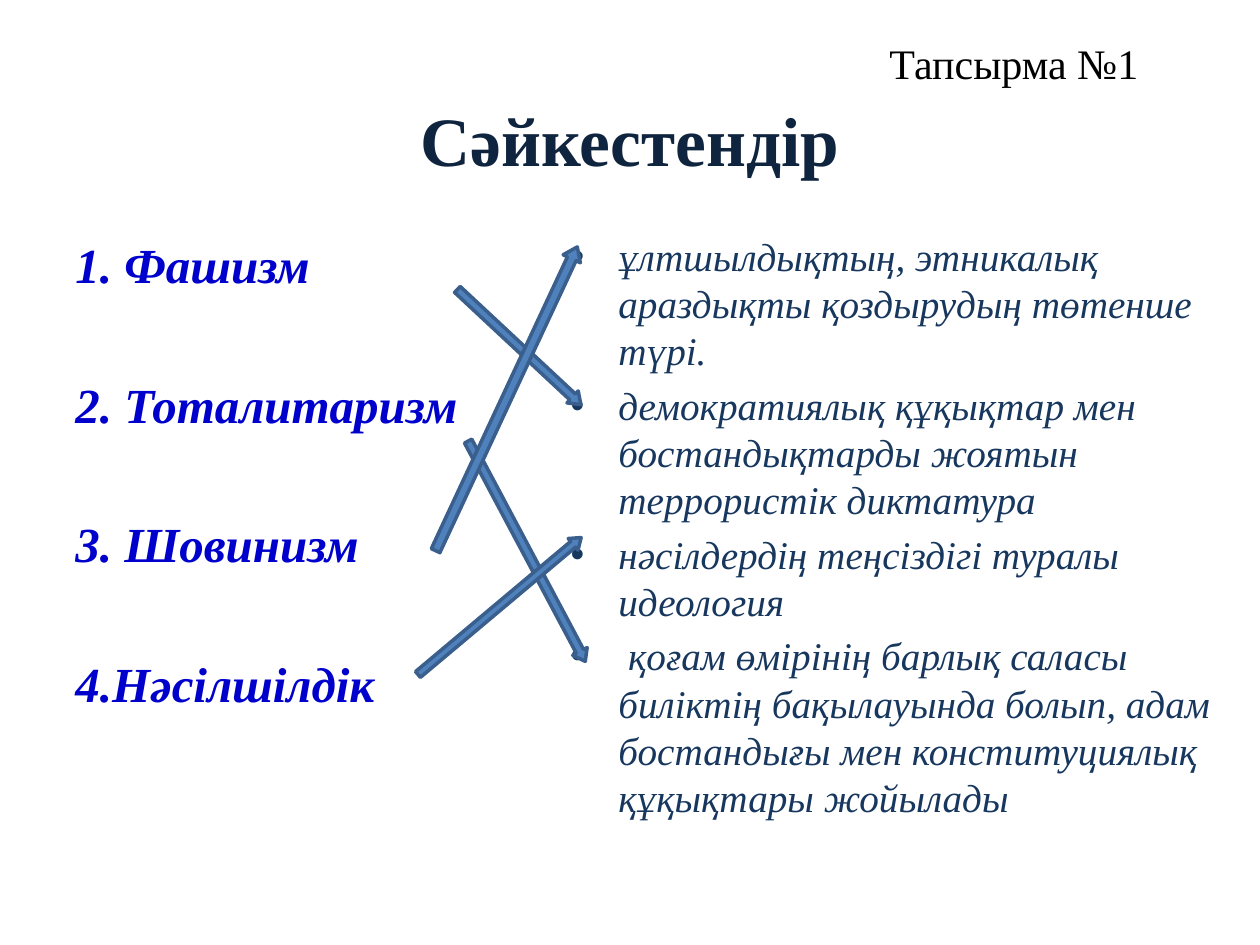
from dataclasses import dataclass

from lxml import etree
from pptx import Presentation
from pptx import util as u
from pptx.dml.color import RGBColor
from pptx.enum import shapes, text
from pptx.oxml.ns import qn


@dataclass(frozen=True)
class Theme:
    """Colours in hex and type sizes in points."""
    font: str = "Times New Roman"
    label: str = "000000"
    title: str = "0F243E"
    term: str = "0000CC"
    meaning: str = "17375E"
    arrow: str = "4F81BD"
    outline: str = "3A5F8C"
    label_size: float = 24
    title_size: float = 39.6
    term_size: float = 28
    meaning_size: float = 22.4


THEME = Theme()
TERMS = ["1. Фашизм", "2. Тоталитаризм", "3. Шовинизм", "4.Нәсілшілдік"]
MEANINGS = [
    "ұлтшылдықтың, этникалық араздықты қоздырудың төтенше түрі.",
    "демократиялық құқықтар мен бостандықтарды жоятын террористік диктатура",
    "нәсілдердің теңсіздігі туралы идеология",
    " қоғам өмірінің барлық саласы биліктің бақылауында болып, адам "
    "бостандығы мен конституциялық құқықтары жойылады",
]
ARROWS = [
    ((3.45, 2.69, 1.34, 0.13), 43),
    ((3.19, 4.31, 1.98, 0.13), 62),
    ((2.69, 3.09, 2.66, 0.15), 295),
    ((3.12, 4.75, 1.69, 0.12), 320),
]


def add_frame(page, area, side, top):
    """Add a wrapping text box with the given insets and return its frame."""
    frame = page.shapes.add_textbox(*map(u.Inches, area)).text_frame
    frame.word_wrap = True
    frame.vertical_anchor = text.MSO_ANCHOR.TOP
    frame.margin_left = frame.margin_right = u.Inches(side)
    frame.margin_top = u.Inches(top)
    return frame


def next_para(frame, gap):
    """Return the empty first paragraph, or a new one set off by a gap."""
    first = frame.paragraphs[0]
    if not first.runs:
        return first
    para = frame.add_paragraph()
    para.space_before = u.Pt(gap)
    return para


def write(para, words, size, colour, bold=False, italic=False):
    """Fill a paragraph with text in one style."""
    para.font.name = THEME.font
    para.font.size = u.Pt(size)
    para.font.color.rgb = RGBColor.from_string(colour)
    para.font.bold = bold
    para.font.italic = italic
    para.add_run().text = words


def indent(para, left, hanging=0):
    """Set the left margin and first-line indent in inches."""
    props = para._p.get_or_add_pPr()
    props.set("marL", str(u.Inches(left)))
    props.set("indent", str(u.Inches(-hanging)))
    return props


def add_heading(page, area):
    """Write the task label above the centred title."""
    frame = add_frame(page, area, 0, 0)
    label = next_para(frame, 0)
    indent(label, 6.56)
    write(label, "Тапсырма №1", THEME.label_size, THEME.label)
    title = next_para(frame, 5)
    title.alignment = text.PP_ALIGN.CENTER
    write(title, "Сәйкестендір", THEME.title_size, THEME.title, bold=True)


def add_terms(page, area):
    """List the numbered terms with wide gaps."""
    frame = add_frame(page, area, 0.1, 0.11)
    for term in TERMS:
        para = next_para(frame, 46.3)
        write(para, term, THEME.term_size, THEME.term, bold=True, italic=True)


def add_meanings(page, area):
    """List the bulleted meanings."""
    frame = add_frame(page, area, 0.1, 0.09)
    for meaning in MEANINGS:
        para = next_para(frame, 4.1)
        para.line_spacing = u.Pt(27)
        props = indent(para, 0.38, 0.38)
        etree.SubElement(props, qn("a:buFont"), typeface="Arial")
        etree.SubElement(props, qn("a:buChar"), char="•")
        write(para, meaning, THEME.meaning_size, THEME.meaning, italic=True)


def add_arrow(page, area, angle):
    """Place one turned arrow linking a term to its meaning."""
    arrow = page.shapes.add_shape(
        shapes.MSO_SHAPE.RIGHT_ARROW, *map(u.Inches, area))
    arrow.rotation = angle
    arrow.adjustments[0] = 0.5
    arrow.adjustments[1] = 0.69
    arrow.shadow.inherit = False
    arrow.fill.solid()
    arrow.fill.fore_color.rgb = RGBColor.from_string(THEME.arrow)
    arrow.line.color.rgb = RGBColor.from_string(THEME.outline)
    arrow.line.width = u.Pt(2)


def main():
    """Build the matching exercise and save it."""
    deck = Presentation()
    deck.slide_width, deck.slide_height = u.Inches(10), u.Inches(7.5)
    page = deck.slides.add_slide(deck.slide_layouts[6])
    add_heading(page, (0.5, 0.3, 9, 0.79))
    add_terms(page, (0.5, 1.75, 3.36, 5.24))
    add_meanings(page, (4.43, 1.75, 5.33, 4.95))
    for area, angle in ARROWS:
        add_arrow(page, area, angle)
    deck.save("out.pptx")


if __name__ == "__main__":
    main()
